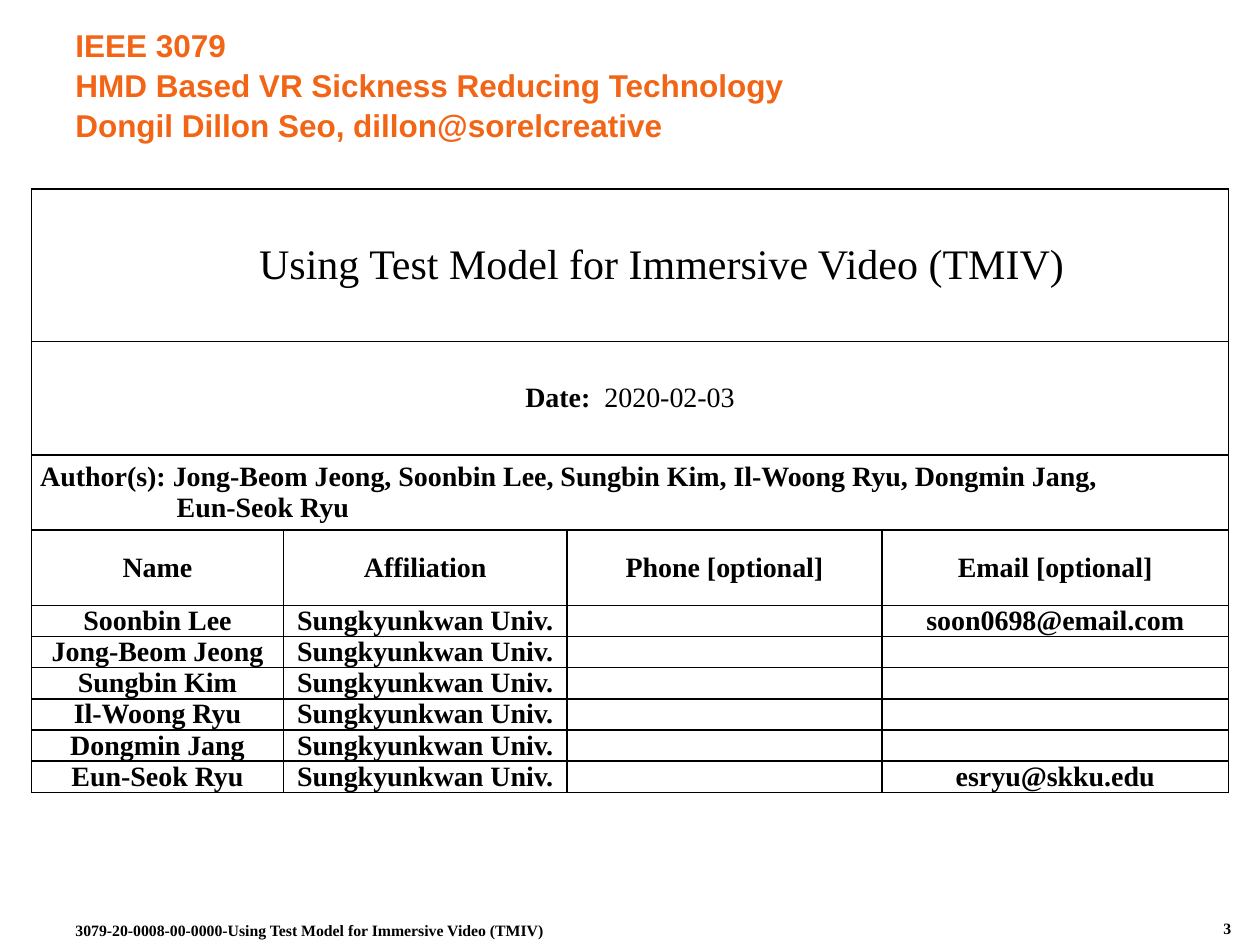
from lxml import etree
from pptx import Presentation
from pptx import util as u
from pptx.dml.color import RGBColor
from pptx.enum import text
from pptx.oxml import ns

Pt = u.Pt
INK = {"black": "000000", "orange": "F26516"}
SERIF = "Times New Roman"
LEFT, MID, RIGHT = text.PP_ALIGN.LEFT, text.PP_ALIGN.CENTER, text.PP_ALIGN.RIGHT


def write(para, parts, size=16, face=SERIF, ink="black", **form):
    """Fill a paragraph with (words, bold) runs and set its format."""
    for words, bold in parts:
        run = para.add_run()
        run.text = words
        look = {"size": Pt(size), "name": face, "bold": bold}
        for key, val in look.items():
            setattr(run.font, key, val)
        run.font.color.rgb = RGBColor.from_string(INK[ink])
    for key, val in form.items():
        setattr(para, key, val)


def edge(cell):
    """Draw a thin black line on all four sides of a cell."""
    props = cell._tc.get_or_add_tcPr()
    for spot, side in enumerate(("lnL", "lnR", "lnT", "lnB")):
        line = etree.Element(ns.qn("a:" + side), w=str(Pt(1)))
        fill = etree.SubElement(line, ns.qn("a:solidFill"))
        etree.SubElement(fill, ns.qn("a:srgbClr"), val=INK["black"])
        props.insert(spot, line)


deck = Presentation()
deck.slide_width, deck.slide_height = Pt(720), Pt(540)
slide = deck.slides.add_slide(deck.slide_layouts[6])

# Author table
UNIV = "Sungkyunkwan Univ."
people = [
    ("Name", "Affiliation", "Phone [optional]", "Email [optional]"),
    ("Soonbin Lee", UNIV, "", "soon0698@email.com"),
    ("Jong-Beom Jeong", UNIV, "", ""),
    ("Sungbin Kim", UNIV, "", ""),
    ("Il-Woong Ryu", UNIV, "", ""),
    ("Dongmin Jang", UNIV, "", ""),
    ("Eun-Seok Ryu", UNIV, "", "esryu@skku.edu"),
]
wide = [144, 162, 180, 198]
high = [87.2, 64.8, 43, 43] + [17.8] * 6
table = slide.shapes.add_table(
    len(high), len(wide), Pt(18), Pt(108), Pt(sum(wide)), Pt(sum(high))).table
table.first_row = table.horz_banding = False
for col, width in zip(table.columns, wide):
    col.width = Pt(width)
for row, height in zip(table.rows, high):
    row.height = Pt(height)

box = {"margin_left": Pt(5), "margin_right": Pt(5), "margin_top": 0,
       "margin_bottom": 0, "vertical_anchor": text.MSO_ANCHOR.MIDDLE}
for cell in table.iter_cells():
    cell.fill.background()
    edge(cell)
    for key, val in box.items():
        setattr(cell, key, val)
for row in range(3):
    table.cell(row, 0).merge(table.cell(row, 3))

head, date, names = (table.cell(row, 0).text_frame for row in range(3))
para = head.paragraphs[0]
write(para, [("Using Test Model for Immersive Video (TMIV)", False)], 24,
      alignment=MID, space_after=Pt(12))
para._p.get_or_add_pPr().set("marL", str(Pt(36)))
write(date.paragraphs[0], [("Date:", True), ("  2020-02-03", False)],
      alignment=MID, space_after=Pt(12))
write(names.paragraphs[0], [("Author(s): Jong-Beom Jeong, Soonbin Lee, "
      "Sungbin Kim, Il-Woong Ryu, Dongmin Jang,", True)])
para = names.add_paragraph()
write(para, [("Eun-Seok Ryu", True)])
para._p.get_or_add_pPr().set("marL", str(Pt(78)))

for row, person in enumerate(people, 3):
    for col, words in enumerate(person):
        para = table.cell(row, col).text_frame.paragraphs[0]
        if words:
            write(para, [(words, True)], alignment=MID)
        else:  # a small size keeps the empty cell from stretching its row
            etree.SubElement(para._p, ns.qn("a:endParaRPr"), sz="1200")

# Title and footer
title = ("IEEE 3079\vHMD Based VR Sickness Reducing Technology\v"
         "Dongil Dillon Seo, dillon@sorelcreative").split("\v")
foot = "3079-20-0008-00-0000-Using Test Model for Immersive Video (TMIV)"
notes = [
    ((36, 12, 648, 72), title, 18, "Arial", "orange", LEFT, 1.05),
    ((594, 520.5, 116.6, 19.5), ["3"], 9, SERIF, "black", RIGHT, 1.0),
    ((36, 522, 378, 19.5), [foot], 9, SERIF, "black", LEFT, 1.0),
]
for place, lines, size, face, ink, side, gap in notes:
    frame = slide.shapes.add_textbox(*map(Pt, place)).text_frame
    frame.word_wrap = True
    frame.vertical_anchor = text.MSO_ANCHOR.MIDDLE
    para = frame.paragraphs[0]
    for spot, line in enumerate(lines):
        if spot:
            para.add_line_break()
        write(para, [(line, True)], size, face, ink,
              alignment=side, line_spacing=gap)

deck.save("out.pptx")
